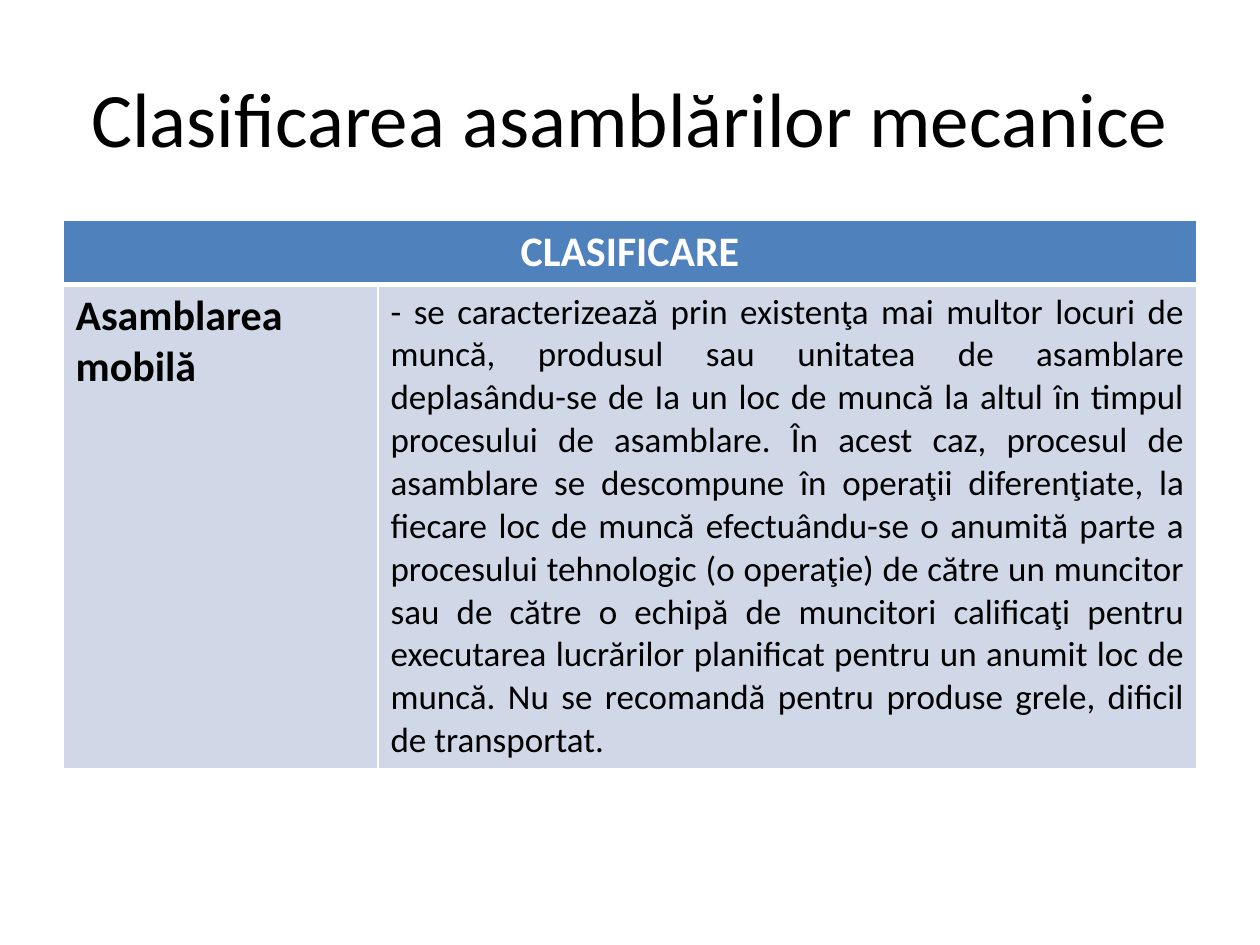
from pptx import Presentation
from pptx.dml.color import RGBColor as RGB
from pptx.enum.text import MSO_ANCHOR as Anchor, PP_ALIGN as Align
from pptx.oxml import parse_xml
from pptx.oxml.ns import nsdecls
from pptx.util import Inches, Pt

COLORS = {"text": "000000", "white": "FFFFFF", "header": "4F81BD", "body": "D0D8E8"}

DESCRIPTION = (
    "- se caracterizează prin existenţa mai multor locuri de muncă, produsul sau "
    "unitatea de asamblare deplasându-se de Ia un loc de muncă la altul în timpul "
    "procesului de asamblare. În acest caz, procesul de asamblare se descompune în "
    "operaţii diferenţiate, la fiecare loc de muncă efectuându-se o anumită parte a "
    "procesului tehnologic (o operaţie) de către un muncitor sau de către o echipă de "
    "muncitori calificaţi pentru executarea lucrărilor planificat pentru un anumit loc "
    "de muncă. Nu se recomandă pentru produse grele, dificil de transportat."
)


class SlideBuilder:
    """Holds the style and the current slide, and adds elements to it."""

    def __init__(self, slide, font="Calibri"):
        self.slide = slide
        self.font = font

    def set_text(self, tf, text, size, color="text", bold=False, align=Align.LEFT):
        p = tf.paragraphs[0]
        p.text = text
        p.alignment = align
        p.font.name = self.font
        p.font.size = Pt(size)
        p.font.bold = bold
        p.font.color.rgb = RGB.from_string(COLORS[color])

    def title(self, text, left, top, width, height):
        sp = self.slide.shapes.title
        sp.left, sp.top = Inches(left), Inches(top)
        sp.width, sp.height = Inches(width), Inches(height)
        sp.text_frame.vertical_anchor = Anchor.MIDDLE
        self.set_text(sp.text_frame, text, 44, align=Align.CENTER)

    def table(self, left, top, widths, heights):
        frame = self.slide.shapes.add_table(
            len(heights), len(widths), Inches(left), Inches(top),
            Inches(sum(widths)), Inches(sum(heights)))
        table = frame.table
        for column, width in zip(table.columns, widths):
            column.width = Inches(width)
        for row, height in zip(table.rows, heights):
            row.height = Inches(height)
        return table

    def fill_cell(self, cell, fill, bottom=1):
        tcPr = cell._tc.get_or_add_tcPr()
        for side, width in (("L", 1), ("R", 1), ("T", 1), ("B", bottom)):
            tcPr.append(parse_xml(
                f'<a:ln{side} {nsdecls("a")} w="{Pt(width)}"><a:solidFill>'
                f'<a:srgbClr val="{COLORS["white"]}"/></a:solidFill></a:ln{side}>'))
        cell.fill.solid()
        cell.fill.fore_color.rgb = RGB.from_string(COLORS[fill])


def main():
    prs = Presentation()
    prs.slide_width, prs.slide_height = Inches(10), Inches(7.5)
    builder = SlideBuilder(prs.slides.add_slide(prs.slide_layouts[5]))
    builder.title("Clasificarea asamblărilor mecanice", 0.5, 0.3, 9, 1.25)

    table = builder.table(0.5, 1.75, widths=(2.5, 6.5), heights=(0.41, 0.41))
    for column in range(2):
        builder.fill_cell(table.cell(0, column), "header", bottom=3)
        builder.fill_cell(table.cell(1, column), "body")
    header, name, details = table.cell(0, 0), table.cell(1, 0), table.cell(1, 1)
    header.merge(table.cell(0, 1))
    builder.set_text(header.text_frame, "CLASIFICARE", 24, "white", True, Align.CENTER)
    builder.set_text(name.text_frame, "Asamblarea mobilă", 24, bold=True)
    builder.set_text(details.text_frame, DESCRIPTION, 20, align=Align.JUSTIFY)

    prs.save("out.pptx")


if __name__ == "__main__":
    main()
